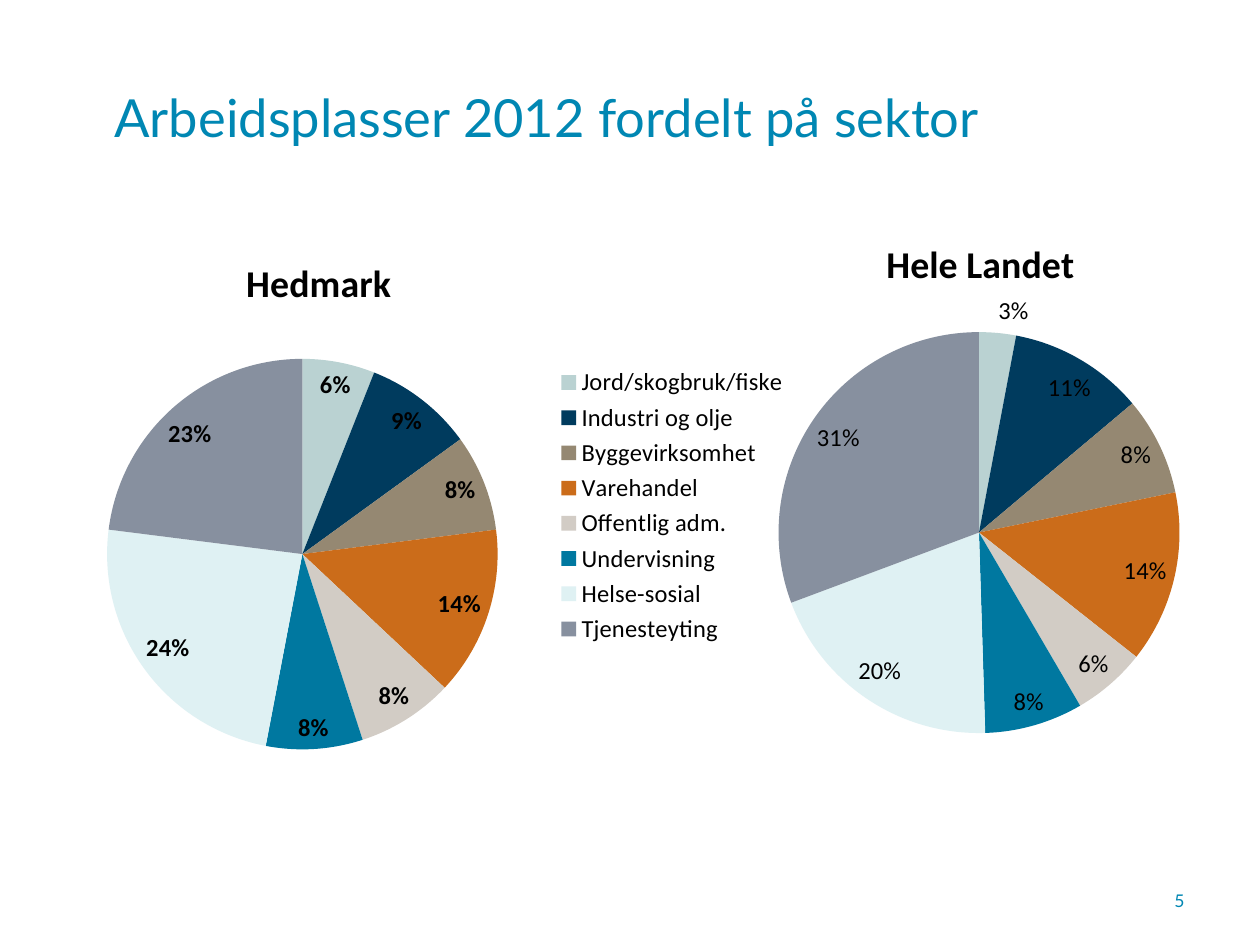
"""Build a slide with two pie charts of jobs by sector in 2012."""
import pptx
import pptx.chart.data
import pptx.dml.color
import pptx.enum.chart
import pptx.enum.text
import pptx.oxml
import pptx.oxml.ns
import pptx.util

Pt = pptx.util.Pt
COLOURS = {
    "accent": "0087B3",
    "text": "000000",
    "Jord/skogbruk/fiske": "BAD2D2",
    "Industri og olje": "003B5E",
    "Byggevirksomhet": "958872",
    "Varehandel": "CB6C1A",
    "Offentlig adm.": "D2CCC5",
    "Undervisning": "0078A0",
    "Helse-sosial": "DFF1F3",
    "Tjenesteyting": "87909F",
}
SECTORS = list(COLOURS)[2:]
CHARTS = [
    {"title": "Hedmark", "series": "Series 1", "categories": list("12345678"),
     "values": [6, 9, 8, 14, 8, 8, 24, 23], "frame": (0, 123, 360, 325.5),
     "title_at": {"x": 0.38, "y": 0.06},
     "plot_at": {"x": 0.17, "y": 0.25, "w": 0.62, "h": 0.69},
     "bold": True, "legend": False},
    {"title": "Hele Landet", "series": "Hele Landet", "categories": SECTORS,
     "values": [3, 11, 8, 14, 6, 8, 20, 31], "frame": (310.3, 118, 392.4, 342),
     "title_at": {"x": 0.49, "y": 0.04},
     "plot_at": {"x": 0.34, "y": 0.21, "w": 0.59, "h": 0.67},
     "bold": False, "legend": True},
]


def add_text(page, text, *, frame, size, align):
    box = page.shapes.add_textbox(*map(Pt, frame))
    box.text_frame.word_wrap = True
    box.text_frame.vertical_anchor = pptx.enum.text.MSO_ANCHOR.MIDDLE
    para = box.text_frame.paragraphs[0]
    para.alignment = align
    span = para.add_run()
    span.text = text
    span.font.size = Pt(size)
    span.font.name = "Lato"
    span.font.color.rgb = pptx.dml.color.RGBColor.from_string(COLOURS["accent"])


def make_layout(place, inner=False):
    target = '<c:layoutTarget val="inner"/>' if inner else ""
    modes = "".join(f'<c:{key}Mode val="edge"/>' for key in place if key in "xy")
    sizes = "".join(f'<c:{key} val="{value}"/>' for key, value in place.items())
    return pptx.oxml.parse_xml(
        f'<c:layout {pptx.oxml.ns.nsdecls("c")}><c:manualLayout>'
        f"{target}{modes}{sizes}</c:manualLayout></c:layout>")


deck = pptx.Presentation()
deck.slide_width, deck.slide_height = Pt(720), Pt(540)
page = deck.slides.add_slide(deck.slide_layouts[6])

add_text(page, "Arbeidsplasser 2012 fordelt på sektor", frame=(58.3, 21.6, 625.7, 90),
         size=30, align=pptx.enum.text.PP_ALIGN.LEFT)

for item in CHARTS:
    data = pptx.chart.data.CategoryChartData()
    data.categories = item["categories"]
    data.add_series(item["series"], item["values"])
    chart = page.shapes.add_chart(
        pptx.enum.chart.XL_CHART_TYPE.PIE, *map(Pt, item["frame"]), data).chart
    chart.font.size = Pt(18)
    chart.font.name = "Calibri"
    chart.font.color.rgb = pptx.dml.color.RGBColor.from_string(COLOURS["text"])

    chart.has_title = True
    title = chart.chart_title
    title.include_in_layout = False
    span = title.text_frame.paragraphs[0].add_run()
    span.text = item["title"]
    span.font.size = Pt(21.6)
    span.font.bold = True
    for holder, after, layout in (
            (title._element, "c:tx", make_layout(item["title_at"])),
            (chart._chartSpace.chart.plotArea, None, make_layout(item["plot_at"], True))):
        for old in holder.findall(pptx.oxml.ns.qn("c:layout")):
            holder.remove(old)
        holder.insert(1 if after else 0, layout)

    chart.has_legend = item["legend"]
    if item["legend"]:
        chart.legend.position = pptx.enum.chart.XL_LEGEND_POSITION.LEFT
        chart.legend.include_in_layout = False
        chart.legend.font.size = Pt(14)

    plot = chart.plots[0]
    plot.vary_by_categories = True
    for index, sector in enumerate(SECTORS):
        fill = plot.series[0].points[index].format.fill
        fill.solid()
        fill.fore_color.rgb = pptx.dml.color.RGBColor.from_string(COLOURS[sector])
    labels = plot.series[0].data_labels
    labels.show_percentage = True
    labels.show_value = False
    labels.number_format = "0%"
    labels.number_format_is_linked = False
    labels.position = pptx.enum.chart.XL_LABEL_POSITION.BEST_FIT
    labels.font.size = Pt(14)
    labels.font.bold = item["bold"]

add_text(page, "5", frame=(635.8, 500.4, 48.2, 28.8),
         size=10, align=pptx.enum.text.PP_ALIGN.RIGHT)

deck.save("out.pptx")
